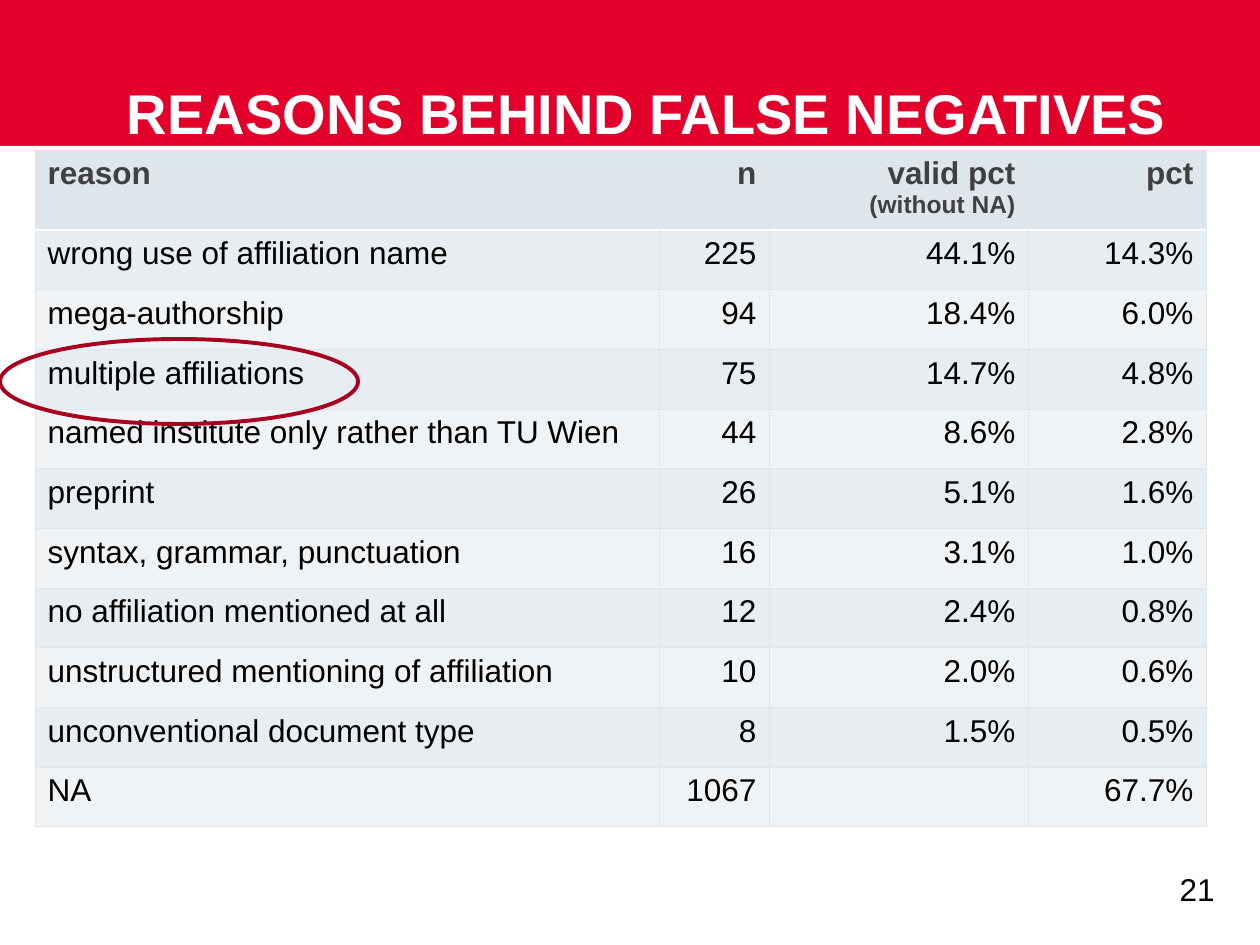
from dataclasses import dataclass

from lxml.etree import SubElement
from pptx import Presentation
from pptx.dml.color import RGBColor
from pptx.enum.shapes import MSO_SHAPE as Preset
from pptx.enum.text import MSO_ANCHOR as Anchor, MSO_AUTO_SIZE as AutoSize, PP_ALIGN as Align
from pptx.oxml.ns import qn
from pptx.util import Emu, Pt

PX_PER_INCH = 126
RED, DARK_RED, WHITE, BLACK = "E3002B", "AA0020", "FFFFFF", "000000"
HEADER_GREY, ODD_GREY, EVEN_GREY, HEADER_TEXT = "DEE6EC", "E8EDF1", "F0F3F6", "404040"
COLUMN_WIDTHS = (624, 110, 259, 178)
HEADER_HEIGHT, BODY_HEIGHT = 78, 597


@dataclass(frozen=True)
class Box:
    left: int
    top: int
    width: int
    height: int

    def emu(self) -> tuple:
        return tuple(map(px, (self.left, self.top, self.width, self.height)))


@dataclass(frozen=True)
class Reason:
    label: str
    count: str
    valid_share: str
    share: str

    def texts(self) -> tuple:
        return self.label, self.count, self.valid_share, self.share


REASONS = (
    Reason("reason", "n", "valid pct\n(without NA)", "pct"),
    Reason("wrong use of affiliation name", "225", "44.1%", "14.3%"),
    Reason("mega-authorship", "94", "18.4%", "6.0%"),
    Reason("multiple affiliations", "75", "14.7%", "4.8%"),
    Reason("named institute only rather than TU Wien", "44", "8.6%", "2.8%"),
    Reason("preprint", "26", "5.1%", "1.6%"),
    Reason("syntax, grammar, punctuation", "16", "3.1%", "1.0%"),
    Reason("no affiliation mentioned at all", "12", "2.4%", "0.8%"),
    Reason("unstructured mentioning of affiliation", "10", "2.0%", "0.6%"),
    Reason("unconventional document type", "8", "1.5%", "0.5%"),
    Reason("NA", "1067", "", "67.7%"),
)


def px(length: int) -> Emu:
    return Emu(round(length * 914400 / PX_PER_INCH))


def rgb(color: str) -> RGBColor:
    return RGBColor.from_string(color)


def style(paragraph, size: int, color: str, bold: bool = False, align=Align.LEFT) -> None:
    paragraph.alignment = align
    font = paragraph.font
    font.name, font.size, font.bold = "Arial", Pt(size), bold
    font.color.rgb = rgb(color)


def add_band(slide, box: Box, color: str) -> None:
    band = slide.shapes.add_shape(Preset.RECTANGLE, *box.emu())
    band.shadow.inherit = False
    band.fill.solid()
    band.fill.fore_color.rgb = rgb(color)
    band.line.fill.background()
    slide.shapes.title.element.addprevious(band.element)


def add_heading(slide, box: Box, wording: str) -> None:
    heading = slide.shapes.title
    heading.left, heading.top, heading.width, heading.height = box.emu()
    frame = heading.text_frame
    frame.text = wording
    frame.word_wrap = True
    frame.auto_size = AutoSize.NONE
    frame.vertical_anchor = Anchor.BOTTOM
    frame.margin_left = frame.margin_top = frame.margin_right = frame.margin_bottom = 0
    paragraph = frame.paragraphs[0]
    paragraph.line_spacing = Pt(32)
    style(paragraph, 32, WHITE, bold=True)


def add_page_number(slide, box: Box, number: str) -> None:
    frame = slide.shapes.add_textbox(*box.emu()).text_frame
    frame.word_wrap = True
    frame.text = number
    style(frame.paragraphs[0], 18, BLACK, align=Align.RIGHT)


def add_border(cell, side: str, color: str, points: float) -> None:
    properties = cell._tc.get_or_add_tcPr()
    border = SubElement(properties, qn(f"a:ln{side}"), w=str(Pt(points)))
    if color:
        fill = SubElement(border, qn("a:solidFill"))
        SubElement(fill, qn("a:srgbClr"), val=color)
    else:
        SubElement(border, qn("a:noFill"))


def fill_cell(cell, text: str, row: int, column: int) -> None:
    is_header = row == 0
    last_column = len(COLUMN_WIDTHS) - 1
    add_border(cell, "L", "" if is_header and column > 0 else HEADER_GREY, 0.5)
    add_border(cell, "R", "" if is_header and column < last_column else HEADER_GREY, 0.5)
    add_border(cell, "T", *((WHITE, 1) if row == 1 else (HEADER_GREY, 0.5)))
    add_border(cell, "B", *((WHITE, 1) if is_header else (HEADER_GREY, 0.5)))
    cell.fill.solid()
    banding = ODD_GREY if row % 2 else EVEN_GREY
    cell.fill.fore_color.rgb = rgb(HEADER_GREY if is_header else banding)
    cell.text = text
    for line, paragraph in enumerate(cell.text_frame.paragraphs):
        style(paragraph, 14 if line else 18, HEADER_TEXT if is_header else BLACK,
              is_header, Align.RIGHT if column else Align.LEFT)


def add_reason_table(slide, left: int, top: int) -> None:
    box = Box(left, top, sum(COLUMN_WIDTHS), HEADER_HEIGHT + BODY_HEIGHT)
    table = slide.shapes.add_table(len(REASONS), len(COLUMN_WIDTHS), *box.emu()).table
    table.first_row = table.horz_banding = False
    for column, width in zip(table.columns, COLUMN_WIDTHS):
        column.width = px(width)
    body_row_height = px(BODY_HEIGHT) // (len(REASONS) - 1)
    for row, reason in enumerate(REASONS):
        table.rows[row].height = body_row_height if row else px(HEADER_HEIGHT)
        for column, text in enumerate(reason.texts()):
            fill_cell(table.cell(row, column), text, row, column)


def add_highlight(slide, box: Box) -> None:
    highlight = slide.shapes.add_shape(Preset.OVAL, *box.emu())
    highlight.shadow.inherit = False
    highlight.fill.background()
    highlight.line.color.rgb = rgb(DARK_RED)
    highlight.line.width = Pt(2.25)


def main() -> None:
    deck = Presentation()
    deck.slide_width, deck.slide_height = px(1260), px(945)
    slide = deck.slides.add_slide(deck.slide_layouts[5])
    add_band(slide, Box(0, 0, 1260, 785), RED)
    add_band(slide, Box(0, 146, 1260, 665), WHITE)
    add_heading(slide, Box(127, 34, 1100, 112), "REASONS BEHIND FALSE NEGATIVES")
    add_page_number(slide, Box(1081, 864, 146, 82), "21")
    add_reason_table(slide, 35, 150)
    add_highlight(slide, Box(0, 339, 358, 85))
    deck.save("out.pptx")


if __name__ == "__main__":
    main()
